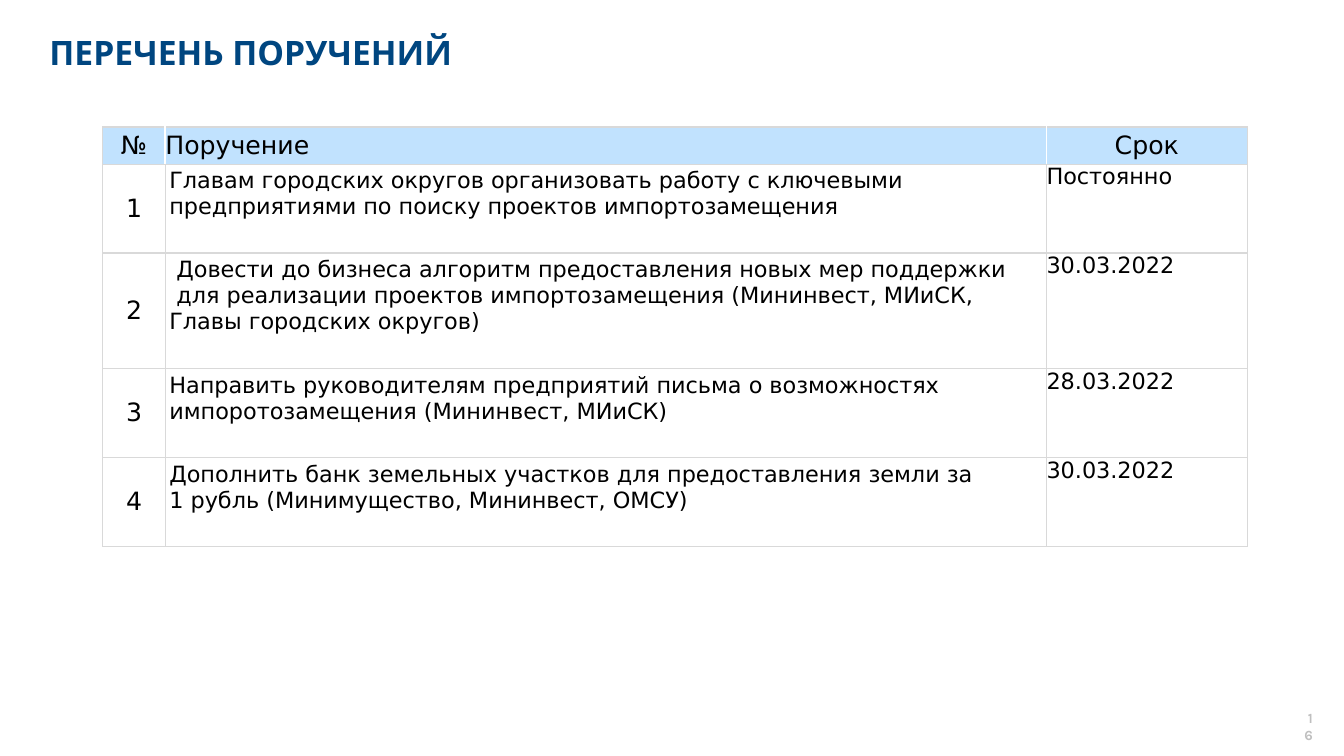
"""Build the slide with the list of assignments."""
from dataclasses import dataclass

from lxml import etree
from pptx import Presentation
from pptx import util as u
from pptx.dml.color import RGBColor
from pptx.enum import text
from pptx.oxml import ns
from pptx.table import _Cell
from pptx.text.text import TextFrame

NAVY = RGBColor(0x00, 0x46, 0x80)
SKY = RGBColor(0xC1, 0xE2, 0xFE)
WHITE = RGBColor(0xFF, 0xFF, 0xFF)
BLACK = RGBColor(0x00, 0x00, 0x00)
RULE = RGBColor(0xD9, 0xD9, 0xD9)
GREY = RGBColor(0xBF, 0xBF, 0xBF)
HEADING_FONT = "Karla"
TABLE_FONT = "DejaVu Sans"
HEADERS = ("№", "Поручение", "Срок")
COLUMN_WIDTHS = (0.62, 8.74, 1.99)
HEADER_HEIGHT = 0.37


@dataclass(frozen=True)
class Assignment:
    paragraphs: tuple[str, ...]
    deadline: str
    height: float = 0.88


ASSIGNMENTS = (
    Assignment(("Главам городских округов организовать работу с ключевыми "
                "предприятиями по поиску проектов импортозамещения",), "Постоянно"),
    Assignment((" Довести до бизнеса алгоритм предоставления новых мер поддержки",
                " для реализации проектов импортозамещения (Мининвест, МИиСК, "
                "Главы городских округов)"), "30.03.2022", 1.15),
    Assignment(("Направить руководителям предприятий письма о возможностях "
                "импоротозамещения (Мининвест, МИиСК)",), "28.03.2022"),
    Assignment(("Дополнить банк земельных участков для предоставления земли за",
                "1 рубль (Минимущество, Мининвест, ОМСУ)"), "30.03.2022"),
)


def write_text(frame: TextFrame, *paragraphs: str, size: float = 16,
               font: str = TABLE_FONT, color: RGBColor = BLACK, bold: bool = False,
               align: text.PP_ALIGN = text.PP_ALIGN.LEFT) -> None:
    for index, content in enumerate(paragraphs):
        paragraph = frame.add_paragraph() if index else frame.paragraphs[0]
        paragraph.alignment = align
        run = paragraph.add_run()
        run.text = content
        run.font.size = u.Pt(size)
        run.font.name = font
        run.font.bold = bold
        run.font.color.rgb = color


def set_margins(box: TextFrame | _Cell, margin: float) -> None:
    box.margin_left = box.margin_top = u.Inches(margin)
    box.margin_right = box.margin_bottom = u.Inches(margin)


def set_border(cell: _Cell, side: str, color: RGBColor, width: float) -> None:
    properties = cell._tc.get_or_add_tcPr()
    line = etree.SubElement(properties, ns.qn(f"a:ln{side}"), w=str(u.Pt(width)))
    fill = etree.SubElement(line, ns.qn("a:solidFill"))
    etree.SubElement(fill, ns.qn("a:srgbClr"), val=str(color))


def format_cell(cell: _Cell, row: int, column: int) -> None:
    last = len(HEADERS) - 1
    for side in "LRTB":
        inner = (side == "L" and column > 0) or (side == "R" and column < last)
        if row == 0 and inner:
            set_border(cell, side, WHITE, 1.5)
        else:
            set_border(cell, side, RULE, 1)
    cell.fill.solid()
    cell.fill.fore_color.rgb = WHITE if row else SKY
    set_margins(cell, 0.04 if row and column == 1 else 0)
    middle = row == 0 or column == 0
    cell.vertical_anchor = text.MSO_ANCHOR.MIDDLE if middle else text.MSO_ANCHOR.TOP


def add_title(slide) -> None:
    title = slide.shapes.title
    title.left, title.top = u.Inches(0.49), u.Inches(0.32)
    title.width, title.height = u.Inches(12.3), u.Inches(0.4)
    frame = title.text_frame
    set_margins(frame, 0)
    frame.vertical_anchor = text.MSO_ANCHOR.TOP
    frame.auto_size = text.MSO_AUTO_SIZE.NONE
    write_text(frame, "ПЕРЕЧЕНЬ ПОРУЧЕНИЙ", size=24, font=HEADING_FONT,
               color=NAVY, bold=True)


def add_assignment_table(slide) -> None:
    heights = (HEADER_HEIGHT, *(item.height for item in ASSIGNMENTS))
    table = slide.shapes.add_table(
        len(heights), len(HEADERS), u.Inches(1.02), u.Inches(1.26),
        u.Inches(sum(COLUMN_WIDTHS)), u.Inches(sum(heights))).table
    table.horz_banding = False
    table.first_row = False
    for column, width in zip(table.columns, COLUMN_WIDTHS):
        column.width = u.Inches(width)
    for row, height in zip(table.rows, heights):
        row.height = u.Inches(height)
    rows = [[(header,) for header in HEADERS]]
    rows += [[(str(number),), item.paragraphs, (item.deadline,)]
             for number, item in enumerate(ASSIGNMENTS, 1)]
    for row, contents in enumerate(rows):
        for column, paragraphs in enumerate(contents):
            cell = table.cell(row, column)
            format_cell(cell, row, column)
            centred = column == 0 or (row == 0 and column == 2)
            write_text(cell.text_frame, *paragraphs,
                       size=18 if row == 0 or column == 0 else 16,
                       align=text.PP_ALIGN.CENTER if centred else text.PP_ALIGN.LEFT)


def add_page_number(slide) -> None:
    box = slide.shapes.add_textbox(u.Inches(12.86), u.Inches(7.07),
                                   u.Inches(0.21), u.Inches(0.27))
    frame = box.text_frame
    frame.word_wrap = True
    set_margins(frame, 0.05)
    frame.vertical_anchor = text.MSO_ANCHOR.MIDDLE
    write_text(frame, "16", size=10, font=HEADING_FONT, color=GREY, bold=True,
               align=text.PP_ALIGN.RIGHT)


def main() -> None:
    presentation = Presentation()
    presentation.slide_width = u.Inches(13.33)
    presentation.slide_height = u.Inches(7.5)
    slide = presentation.slides.add_slide(presentation.slide_layouts[5])
    add_title(slide)
    add_assignment_table(slide)
    add_page_number(slide)
    presentation.save("out.pptx")


if __name__ == "__main__":
    main()
